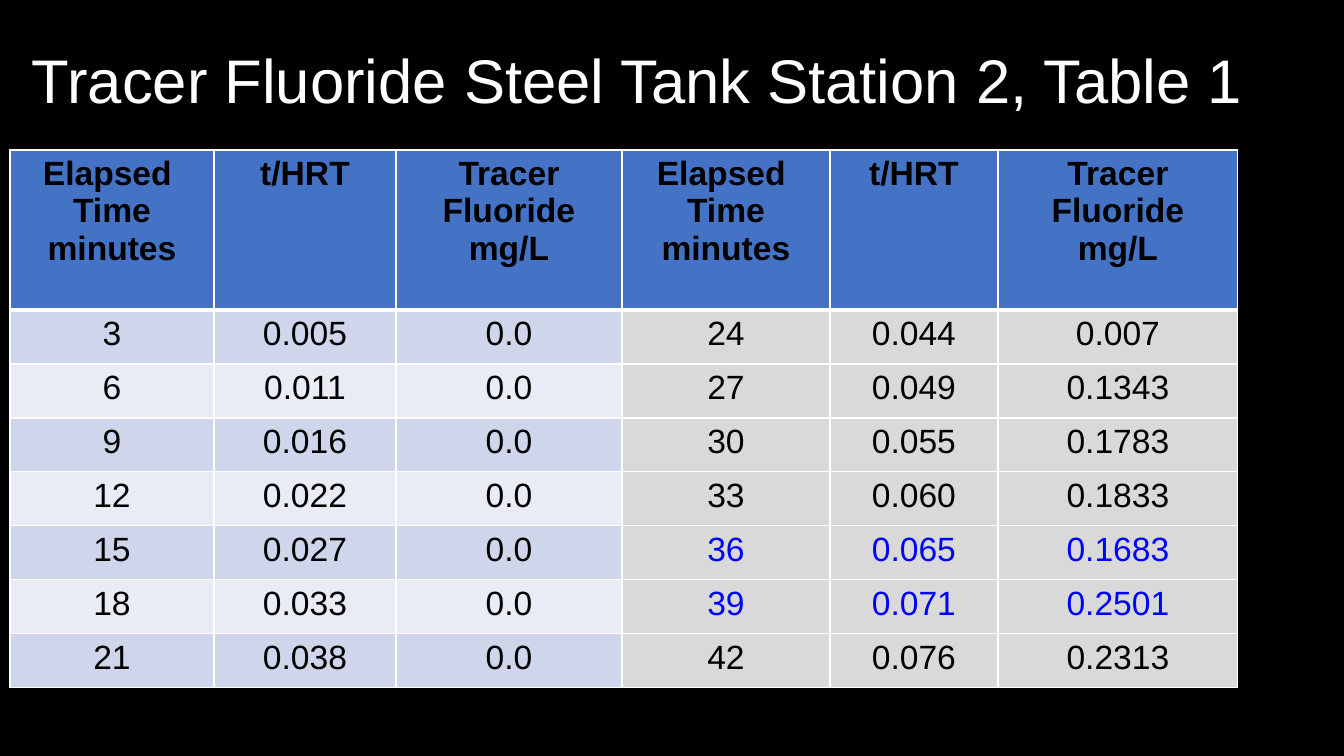
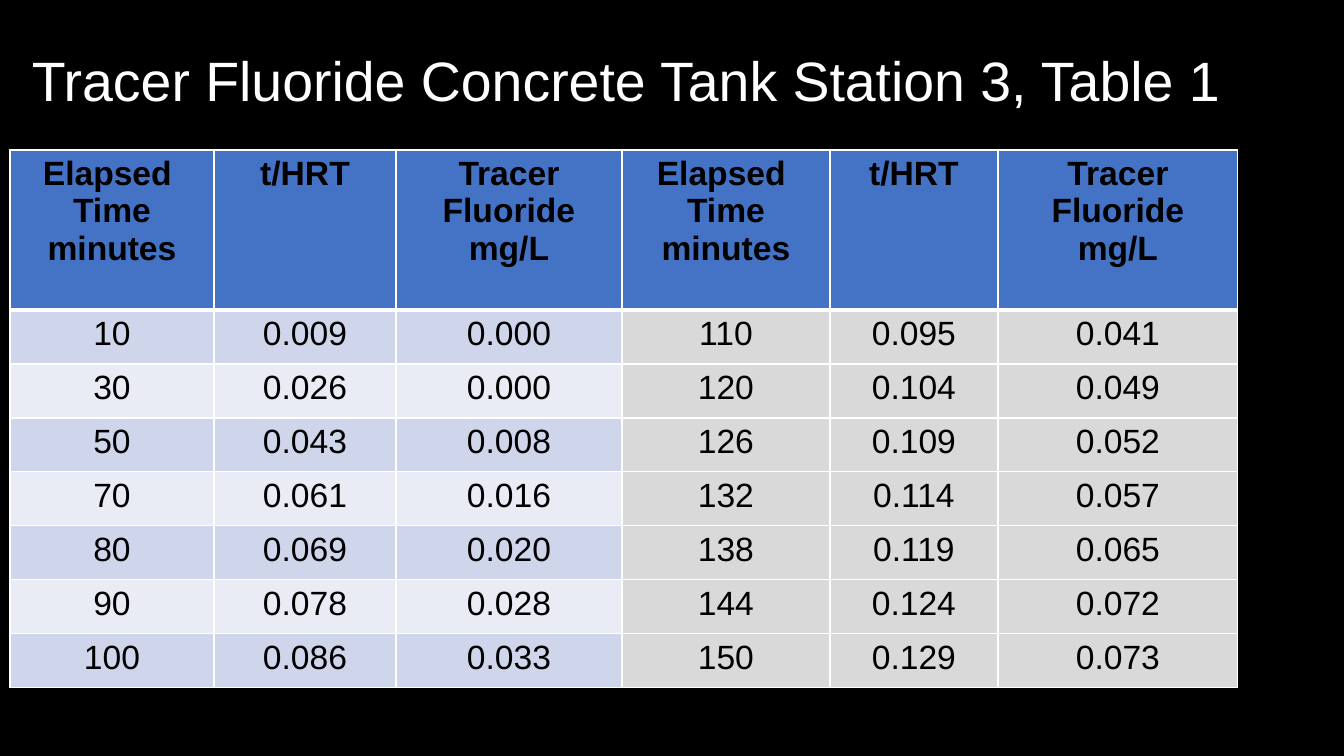
from dataclasses import dataclass

from lxml.etree import SubElement
from pptx import Presentation
from pptx.dml.color import RGBColor
from pptx.enum.text import MSO_ANCHOR, PP_ALIGN
from pptx.oxml.ns import qn
from pptx.util import Emu, Pt

HEADINGS = ["Elapsed \vTime\nminutes", "t/HRT", "Tracer Fluoride\nmg/L"] * 2

SLIDES = [
    {
        "title": "Tracer Fluoride Steel Tank Station 2, Table 1",
        "title_size": 44,
        "highlighted": {"36", "39"},
        "rows": [
            ("3", "0.005", "0.0", "24", "0.044", "0.007"),
            ("6", "0.011", "0.0", "27", "0.049", "0.1343"),
            ("9", "0.016", "0.0", "30", "0.055", "0.1783"),
            ("12", "0.022", "0.0", "33", "0.060", "0.1833"),
            ("15", "0.027", "0.0", "36", "0.065", "0.1683"),
            ("18", "0.033", "0.0", "39", "0.071", "0.2501"),
            ("21", "0.038", "0.0", "42", "0.076", "0.2313"),
        ],
    },
    {
        "title": "Tracer Fluoride Concrete Tank Station 3, Table 1",
        "title_size": 39.6,
        "highlighted": set(),
        "rows": [
            ("10", "0.009", "0.000", "110", "0.095", "0.041"),
            ("30", "0.026", "0.000", "120", "0.104", "0.049"),
            ("50", "0.043", "0.008", "126", "0.109", "0.052"),
            ("70", "0.061", "0.016", "132", "0.114", "0.057"),
            ("80", "0.069", "0.020", "138", "0.119", "0.065"),
            ("90", "0.078", "0.028", "144", "0.124", "0.072"),
            ("100", "0.086", "0.033", "150", "0.129", "0.073"),
        ],
    },
]


@dataclass(frozen=True)
class Theme:
    font: str = "Arial"
    table_size: int = 24
    background: str = "000000"
    title: str = "FFFFFF"
    text: str = "000000"
    highlight: str = "0000FF"
    header: str = "4472C4"
    bands: tuple = ("CFD5EA", "E9EBF5")
    right_half: str = "D9D9D9"
    border: str = "FFFFFF"
    thin: int = 1
    thick: int = 3


THEME = Theme()
SLIDE_SIZE = (1344, 756)
TITLE_BOX = (22, 40, 1299, 87)
TABLE_ORIGIN = (10, 150)
COLUMN_WIDTHS = (204, 182, 226, 208, 168, 240)
HEADER_HEIGHT, ROW_HEIGHT = 160, 54
HALF = len(HEADINGS) // 2


def px(length):
    return Emu(round(length * 12192000 / SLIDE_SIZE[0]))


def format_paragraph(paragraph, color, **formats):
    for name, value in {"name": THEME.font, **formats}.items():
        setattr(paragraph.font, name, value)
    paragraph.font.color.rgb = RGBColor.from_string(color)


def set_borders(cell, widths):
    properties = cell._tc.get_or_add_tcPr()
    for side, width in widths.items():
        line = SubElement(properties, qn(f"a:ln{side}"), w=str(Pt(width)))
        fill = SubElement(line, qn("a:solidFill"))
        SubElement(fill, qn("a:srgbClr"), val=THEME.border)


def add_title(slide, text, size):
    frame = slide.shapes.add_textbox(*map(px, TITLE_BOX)).text_frame
    frame.word_wrap = True
    frame.vertical_anchor = MSO_ANCHOR.MIDDLE
    frame.text = text
    frame.paragraphs[0].line_spacing = 0.9
    format_paragraph(frame.paragraphs[0], THEME.title, size=Pt(size))


def cell_fill(row, column):
    if row == 0:
        return THEME.header
    if column >= HALF:
        return THEME.right_half
    return THEME.bands[(row - 1) % 2]


def fill_cell(cell, row, column, text, color):
    # The rule under the header is shared by the first two rows.
    set_borders(cell, {
        "L": THEME.thin,
        "R": THEME.thin,
        "T": THEME.thick if row == 1 else THEME.thin,
        "B": THEME.thick if row == 0 else THEME.thin,
    })
    cell.fill.solid()
    cell.fill.fore_color.rgb = RGBColor.from_string(cell_fill(row, column))
    cell.text_frame.text = text
    for paragraph in cell.text_frame.paragraphs:
        paragraph.alignment = PP_ALIGN.CENTER
        format_paragraph(paragraph, color, size=Pt(THEME.table_size), bold=row == 0)


def add_data_table(slide, data_rows, highlighted):
    """Add the two-part table; highlighted holds elapsed times of the right half."""
    rows = [HEADINGS, *data_rows]
    heights = [HEADER_HEIGHT] + [ROW_HEIGHT] * len(data_rows)
    size = (sum(COLUMN_WIDTHS), sum(heights))
    table = slide.shapes.add_table(
        len(rows), len(HEADINGS), *map(px, TABLE_ORIGIN + size)
    ).table
    for column, width in zip(table.columns, COLUMN_WIDTHS):
        column.width = px(width)
    for row, (values, height) in enumerate(zip(rows, heights)):
        table.rows[row].height = px(height)
        for column, text in enumerate(values):
            marked = column >= HALF and values[HALF] in highlighted
            color = THEME.highlight if marked else THEME.text
            fill_cell(table.cell(row, column), row, column, text, color)


def main():
    presentation = Presentation()
    presentation.slide_width, presentation.slide_height = map(px, SLIDE_SIZE)
    background = presentation.slide_master.background.fill
    background.solid()
    background.fore_color.rgb = RGBColor.from_string(THEME.background)
    for content in SLIDES:
        slide = presentation.slides.add_slide(presentation.slide_layouts[6])
        add_title(slide, content["title"], content["title_size"])
        add_data_table(slide, content["rows"], content["highlighted"])
    presentation.save("out.pptx")


if __name__ == "__main__":
    main()
